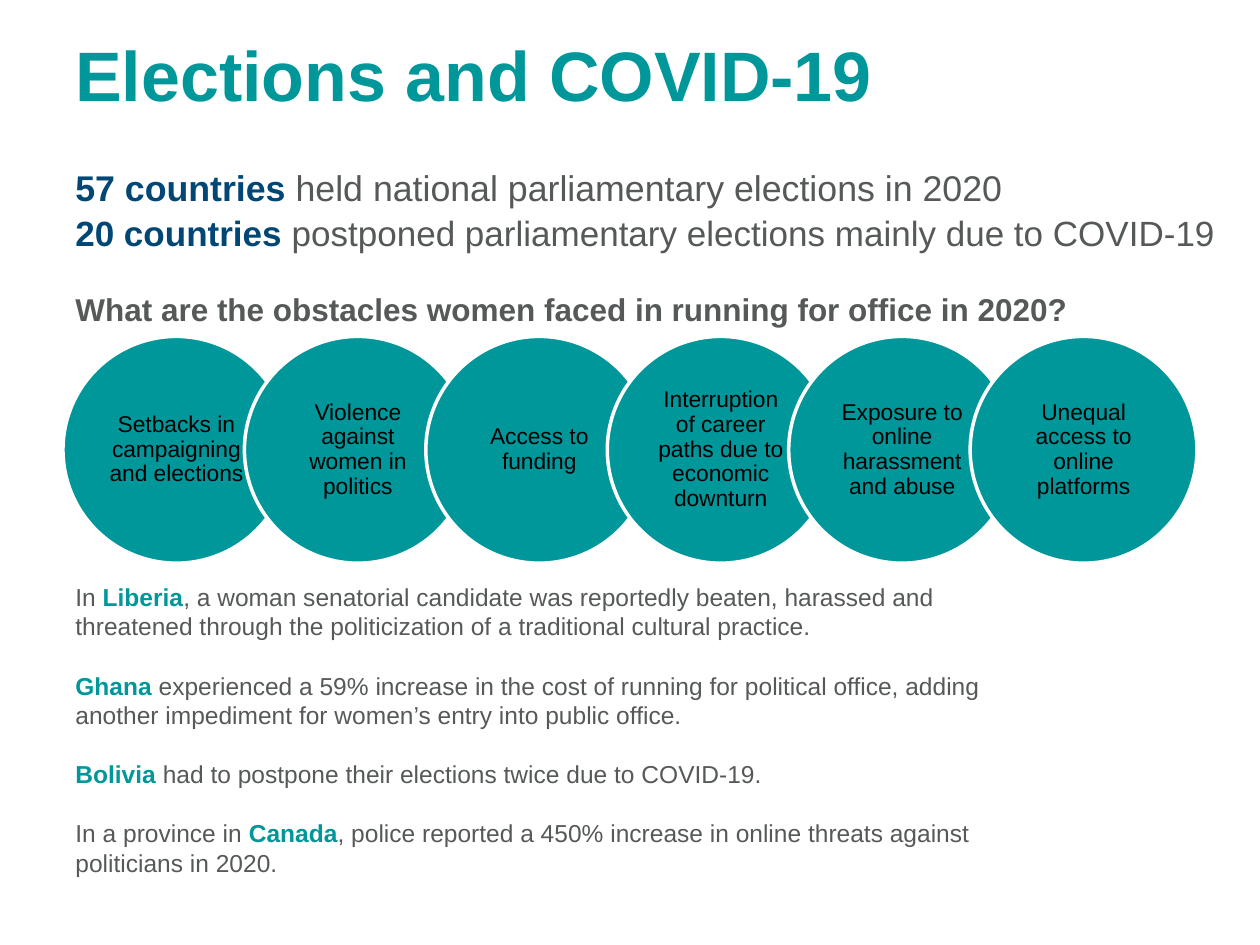
from typing import NamedTuple

from pptx import Presentation
from pptx.dml.color import RGBColor as Rgb
from pptx.enum.shapes import MSO_SHAPE as Shape
from pptx.enum.text import MSO_ANCHOR as Anchor, PP_ALIGN as Align
from pptx.util import Inches, Pt

HUES = {"teal": "00979B", "navy": "004775", "grey": "565959",
        "white": "FFFFFF", "black": "000000"}


class Run(NamedTuple):
    text: str
    hue: str = "grey"
    bold: bool = False


class Block(NamedTuple):
    top: float
    width: float
    height: float
    size: float
    paras: list[list[Run]]
    gap: float = 0


# Text blocks, all on the same left edge
LEFT = 0.5
BLOCKS = [
    Block(0.2, 9, 1.24, 40, [[Run("Elections and COVID-19", "teal", True)]]),
    Block(1.27, 9, 0.4, 20.4, [[
        Run("57 countries ", "navy", True),
        Run("held national parliamentary elections in 2020")]]),
    Block(1.63, 9.3, 0.44, 20, [[
        Run("20 countries ", "navy", True),
        Run("postponed parliamentary elections mainly due to COVID-19")]]),
    Block(2.25, 8.24, 0.4, 18, [[
        Run("What are the obstacles women faced in running for office in 2020?",
            bold=True)]]),
    Block(4.57, 7.79, 2.46, 14, [
        [Run("In "), Run("Liberia", "teal", True),
         Run(", a woman senatorial candidate was reportedly beaten, harassed and "
             "threatened through the politicization of a traditional cultural "
             "practice.")],
        [Run("Ghana ", "teal", True),
         Run("experienced a 59% increase in the cost of running for political "
             "office, adding another impediment for women’s entry into public "
             "office.")],
        [Run("Bolivia ", "teal", True),
         Run("had to postpone their elections twice due to COVID-19.")],
        [Run("In a province in "), Run("Canada", "teal", True),
         Run(", police reported a 450% increase in online threats against "
             "politicians in 2020.")],
    ], gap=17),
]

# Chain of overlapping circles
TOP, SIZE, STEP = 2.67, 1.8, 1.44
ISSUES = [
    "Setbacks in campaigning and elections",
    "Violence against women in politics",
    "Access to funding",
    "Interruption of career paths due to economic downturn",
    "Exposure to online harassment and abuse",
    "Unequal access to online platforms",
]
INSETS = {"margin_left": Inches(0.1), "margin_right": Inches(0.1),
          "margin_top": Inches(0.02), "margin_bottom": Inches(0.02),
          "vertical_anchor": Anchor.MIDDLE, "word_wrap": True}


def color(name: str) -> Rgb:
    return Rgb.from_string(HUES[name])


def style(item, values: dict) -> None:
    for key, value in values.items():
        setattr(item, key, value)


def add_run(para, run: Run, size: float) -> None:
    part = para.add_run()
    part.text = run.text
    style(part.font, {"name": "Arial", "size": Pt(size), "bold": run.bold})
    part.font.color.rgb = color(run.hue)


def add_block(slide, block: Block) -> None:
    box = slide.shapes.add_textbox(Inches(LEFT), Inches(block.top),
                                   Inches(block.width), Inches(block.height))
    frame = box.text_frame
    frame.word_wrap = True
    for i, runs in enumerate(block.paras):
        para = frame.add_paragraph() if i else frame.paragraphs[0]
        if i:
            para.space_before = Pt(block.gap)
        for run in runs:
            add_run(para, run, block.size)


def add_circle(slide, index: int, text: str) -> None:
    disc = slide.shapes.add_shape(Shape.OVAL, Inches(LEFT + index * STEP),
                                  Inches(TOP), Inches(SIZE), Inches(SIZE))
    disc.shadow.inherit = False
    disc.fill.solid()
    disc.fill.fore_color.rgb = color("teal")
    disc.line.color.rgb = color("white")
    disc.line.width = Pt(2)
    style(disc.text_frame, INSETS)
    para = disc.text_frame.paragraphs[0]
    style(para, {"alignment": Align.CENTER, "line_spacing": 0.9})
    add_run(para, Run(text, "black"), 13)


def main() -> None:
    deck = Presentation()
    style(deck, {"slide_width": Inches(10), "slide_height": Inches(7.5)})
    slide = deck.slides.add_slide(deck.slide_layouts[6])
    for block in BLOCKS:
        add_block(slide, block)
    for index, text in enumerate(ISSUES):
        add_circle(slide, index, text)
    deck.save("out.pptx")


if __name__ == "__main__":
    main()
